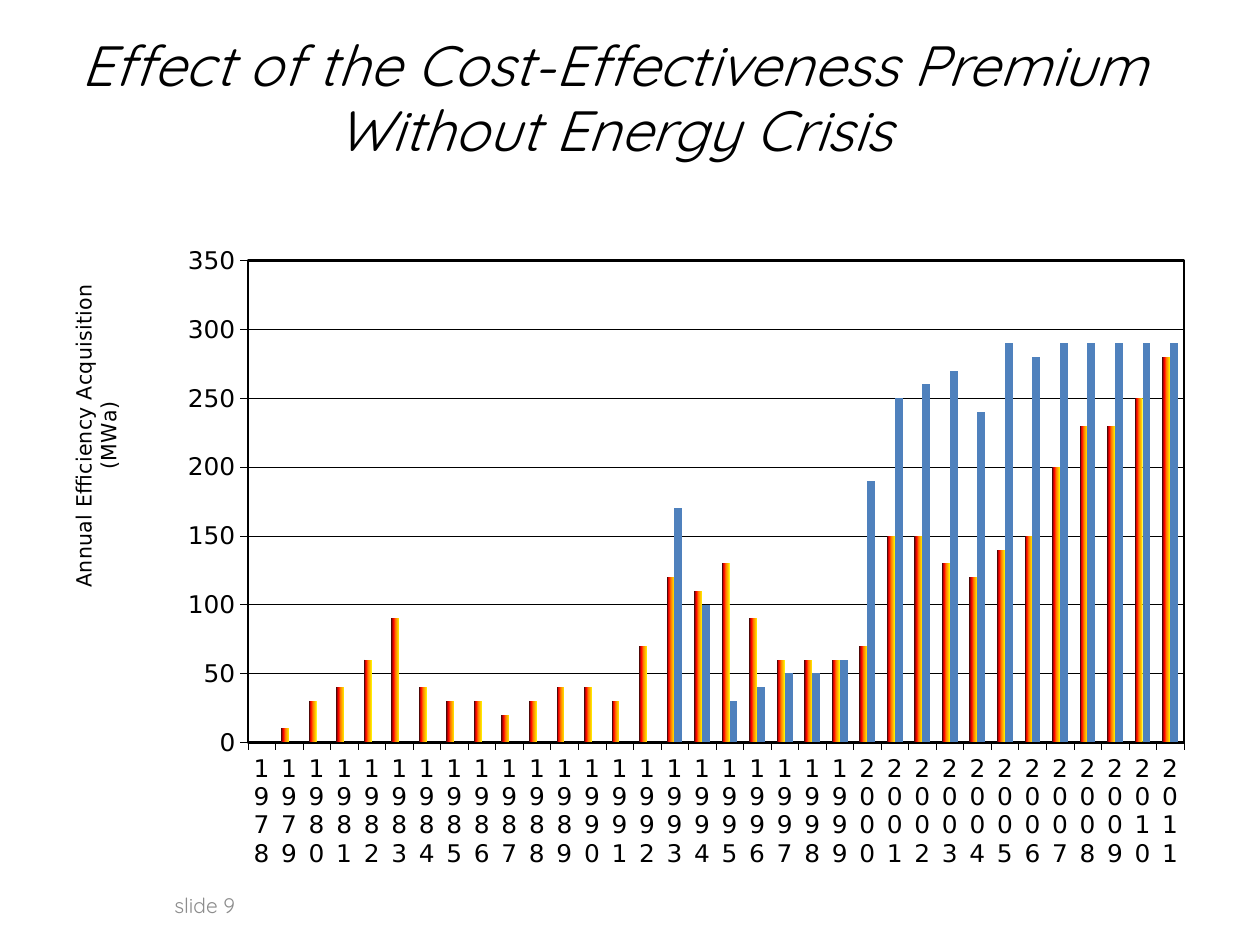
from dataclasses import dataclass
from lxml.etree import SubElement
from pptx import Presentation
from pptx.chart.data import CategoryChartData
from pptx.dml.color import RGBColor
from pptx.enum.chart import XL_CHART_TYPE, XL_TICK_MARK
from pptx.enum.text import MSO_ANCHOR, PP_ALIGN
from pptx.oxml import parse_xml
from pptx.oxml.ns import nsdecls, qn
from pptx.util import Inches, Pt

COLS, ROWS = 120, 90  # grid units of 1/12 inch
YEARS = [str(year) for year in range(1978, 2012)]
ACTUAL = [0, 10, 30, 40, 60, 90, 40, 30, 30, 20, 30, 40, 40, 30, 70, 120, 110,
          130, 90, 60, 60, 60, 70, 150, 150, 130, 120, 140, 150, 200, 230, 230,
          250, 280]
PREMIUM = [None] * 15 + [170, 100, 30, 40, 50, 50, 60, 190, 250, 260, 270, 240,
                         290, 280, 290, 290, 290, 290, 290]


@dataclass(frozen=True)
class Theme:
    head: str = "Quicksand"
    body: str = "DejaVu Sans"
    ink: str = "000000"
    grey: str = "8C8C8C"
    blue: str = "4F81BD"
    flame: tuple = ((0, "FFF200"), (45, "FF7A00"), (70, "FF0300"), (100, "4D0808"))
    title: float = 32.4
    label: float = 14.2
    axis: float = 12
    note: float = 12
    thin: float = 0.25
    frame: float = 1.5


def style(font, name, size, color, italic=False):
    font.name, font.size = name, Pt(size)
    font.bold, font.italic = False, italic
    font.color.rgb = RGBColor.from_string(color)


def write(frame, text, *, name, size, color, italic=False, space=None):
    para = frame.paragraphs[0]
    para.text = text
    para.alignment = PP_ALIGN.CENTER
    if space:
        para.line_spacing = space
    for run in para.runs:
        style(run.font, name, size, color, italic)


def stroke(line, color, width):
    line.color.rgb = RGBColor.from_string(color)
    line.width = Pt(width)


def place(part, index, **shares):
    """Lay out a chart part by shares of the chart; index is the layout's rank."""
    layout = part.find(qn("c:layout"))
    if layout is None:
        layout = SubElement(part, qn("c:layout"))
        part.insert(index, layout)
    manual = SubElement(layout, qn("c:manualLayout"))
    if "w" in shares:
        SubElement(manual, qn("c:layoutTarget")).set("val", "inner")
    for mode in ("xMode", "yMode"):
        SubElement(manual, qn(f"c:{mode}")).set("val", "edge")
    for key, share in shares.items():
        SubElement(manual, qn(f"c:{key}")).set("val", str(share))


def blend(series, stops, angle):
    """Give a series a linear gradient of several stops."""
    marks = "".join(f'<a:gs pos="{pos * 1000}"><a:srgbClr val="{color}"/></a:gs>'
                    for pos, color in stops)
    props = series.format.fill._xPr
    props.insert(0, parse_xml(
        f'<a:gradFill {nsdecls("a")} rotWithShape="0"><a:gsLst>{marks}</a:gsLst>'
        f'<a:lin ang="{angle * 60000}" scaled="0"/></a:gradFill>'))


class Deck:
    def __init__(self, theme):
        self.theme = theme
        self.show = Presentation()
        self.show.slide_width, self.show.slide_height = Inches(10), Inches(7.5)
        self.slide = self.show.slides.add_slide(self.show.slide_layouts[6])

    def box(self, col, row, wide, high):
        across = self.show.slide_width / COLS
        down = self.show.slide_height / ROWS
        return [round(v) for v in (col * across, row * down, wide * across, high * down)]

    def text(self, text, area, anchor=MSO_ANCHOR.MIDDLE, **form):
        frame = self.slide.shapes.add_textbox(*self.box(*area)).text_frame
        frame.word_wrap = True
        frame.vertical_anchor = anchor
        write(frame, text, name=self.theme.head, **form)

    def axis(self, axis):
        look = self.theme
        axis.major_tick_mark = XL_TICK_MARK.OUTSIDE
        axis.minor_tick_mark = XL_TICK_MARK.NONE
        stroke(axis.format.line, look.ink, look.thin)
        style(axis.tick_labels.font, look.body, look.label, look.ink)

    def chart(self, area, cats, rows, title):
        look = self.theme
        data = CategoryChartData()
        data.categories = cats
        for name, vals in rows.items():
            data.add_series(name, vals)
        chart = self.slide.shapes.add_chart(
            XL_CHART_TYPE.COLUMN_CLUSTERED, *self.box(*area), data).chart
        chart.has_title = chart.has_legend = False
        style(chart.font, look.body, look.label, look.ink)

        years, scale = chart.category_axis, chart.value_axis
        for axis in (years, scale):
            self.axis(axis)
        # An explicit zero turn lets the narrow year labels break by digit.
        years._element.find(qn("c:txPr")).find(qn("a:bodyPr")).set("rot", "0")
        scale.minimum_scale, scale.maximum_scale, scale.major_unit = 0, 350, 50
        scale.tick_labels.number_format = "#,##0"
        scale.tick_labels.number_format_is_linked = False
        stroke(scale.major_gridlines.format.line, look.ink, look.thin)
        head = scale.axis_title
        write(head.text_frame, title, name=look.body, size=look.axis, color=look.ink)
        body = head.text_frame._txBody.find(qn("a:bodyPr"))
        body.set("rot", "-5400000")
        body.set("vert", "horz")
        place(head._element, 1, x=0.02, y=0.07)

        plot = chart.plots[0]
        plot.gap_width, plot.overlap, plot.vary_by_categories = 150, 0, False
        actual, premium = plot.series
        blend(actual, look.flame, 180)
        premium.format.fill.solid()
        premium.format.fill.fore_color.rgb = RGBColor.from_string(look.blue)

        field = chart._chartSpace.chart.plotArea
        place(field, 0, x=0.175, y=0.036, w=0.796, h=0.784)
        field.append(parse_xml(
            f'<c:spPr {nsdecls("c", "a")}><a:noFill/><a:ln w="{int(Pt(look.frame))}">'
            f'<a:solidFill><a:srgbClr val="{look.ink}"/></a:solidFill></a:ln></c:spPr>'))


def main():
    look = Theme()
    deck = Deck(look)
    deck.text("slide 9", (9, 82, 21, 6), MSO_ANCHOR.BOTTOM,
              size=look.note, color=look.grey)
    deck.text("Effect of the Cost-Effectiveness Premium\vWithout Energy Crisis",
              (2, 3, 113, 13), size=look.title, color=look.ink, italic=True, space=0.96)
    deck.chart((4, 22.7, 112, 59.9), YEARS, {"Series 1": ACTUAL, "Series 2": PREMIUM},
               "Annual Efficiency Acquisition \v(MWa)")
    deck.show.save("out.pptx")


if __name__ == "__main__":
    main()
